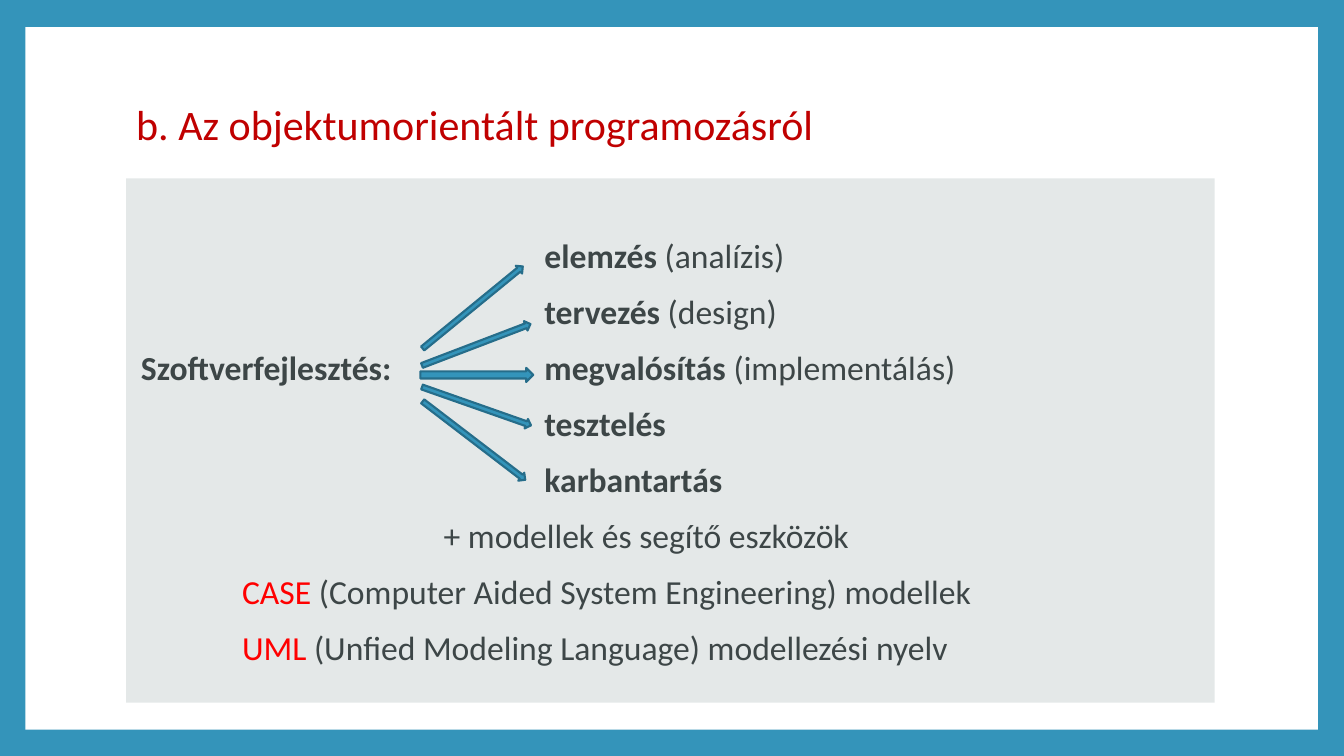
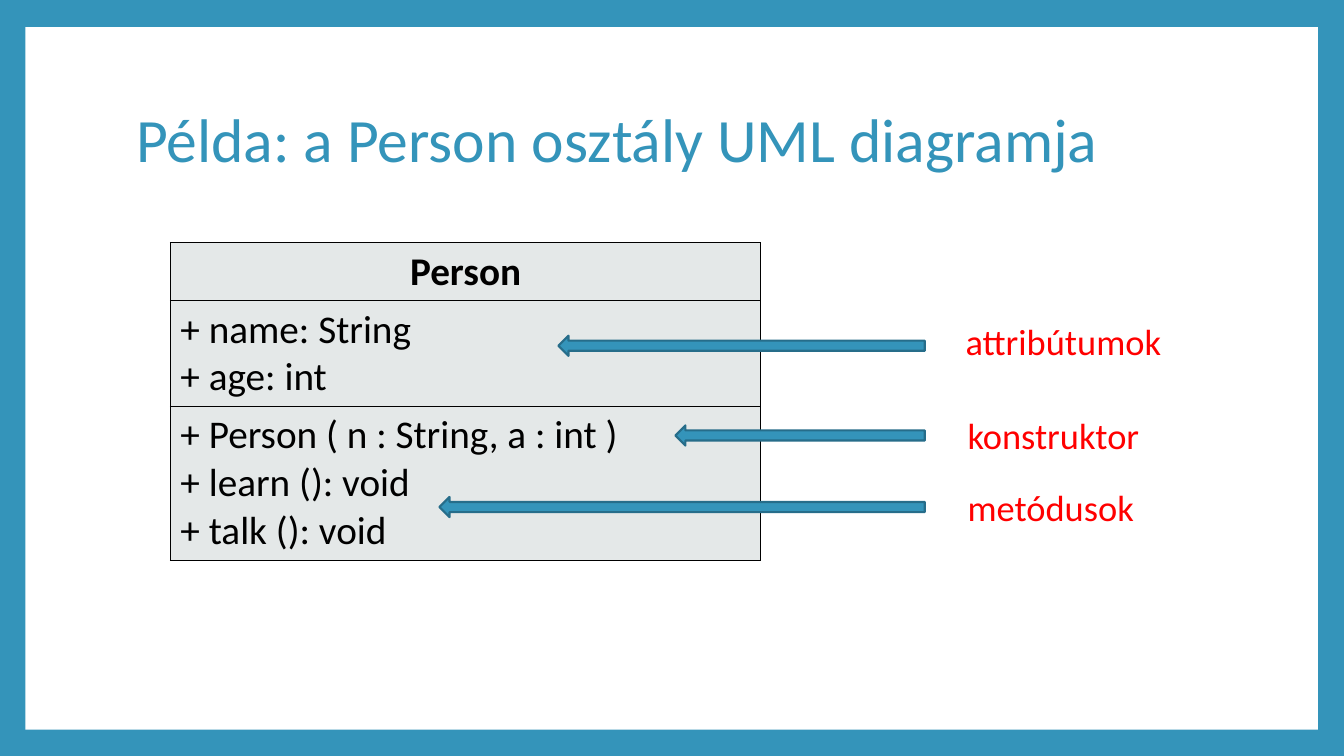
from dataclasses import dataclass
from math import atan2, degrees, hypot

from lxml.etree import SubElement
from pptx import Presentation
from pptx.dml.color import RGBColor
from pptx.enum.shapes import MSO_SHAPE
from pptx.enum.text import MSO_ANCHOR, MSO_AUTO_SIZE, PP_ALIGN
from pptx.oxml import parse_xml
from pptx.oxml.ns import nsdecls, qn
from pptx.util import Emu, Inches, Pt


@dataclass(frozen=True)
class Theme:
    font: str = "Calibri"
    blue: str = "3494BA"
    edge: str = "266D8A"
    white: str = "FFFFFF"
    gray: str = "E4E8E8"
    dark: str = "3D4647"
    black: str = "000000"
    red: str = "FF0000"
    crimson: str = "C00000"
    title_size: int = 44
    subtitle_size: int = 30
    class_size: int = 28
    label_size: int = 26
    body_size: int = 24


THEME = Theme()
WIDTH, HEIGHT = Inches(13.33), Inches(7.5)
LEFT, CONTENT_WIDTH = 9.38, 81
TITLE_TOP = 8.93
BODY_AREA = (LEFT, 23.6, CONTENT_WIDTH, 69.33)
COLUMN = Inches(1)
LABEL_WIDTH, LABEL_HEIGHT = 22, 7.2
ARROW_END = 68.81
ARROW_HEIGHT = 2.67

PLAIN = {"size": THEME.body_size, "color": THEME.dark, "bold": False}
STRONG = PLAIN | {"bold": True}
ACCENT = PLAIN | {"color": THEME.red}
LABEL = {"size": THEME.label_size, "color": THEME.red}
MEMBER = {"size": THEME.class_size, "color": THEME.black, "bold": False}
CLASS_NAME = MEMBER | {"bold": True}

DEVELOPMENT = [
    (4, [("elemzés", STRONG), (" (analízis)", PLAIN)]),
    (4, [("tervezés", STRONG), (" (design)", PLAIN)]),
    (4, [("megvalósítás", STRONG), (" (implementálás)", PLAIN)]),
    (4, [("tesztelés", STRONG)]),
    (4, [("karbantartás", STRONG)]),
    (3, [("+ modellek és segítő eszközök", PLAIN)]),
    (1, [("CASE", ACCENT), (" (Computer Aided System Engineering) modellek", PLAIN)]),
    (1, [("UML", ACCENT), (" (Unfied Modeling Language) modellezési nyelv", PLAIN)]),
]
FAN = [
    ((31.45, 46.1), (38.9, 35.25), 1.33),
    ((31.4, 48.35), (39.47, 42.87), 1.33),
    ((31.28, 49.6), (39.68, 49.6), 1.87),
    ((31.4, 51.2), (39.51, 56.27), 1.33),
    ((31.45, 53.1), (39.08, 63.47), 1.33),
]
PERSON = [
    (["Person"], CLASS_NAME, PP_ALIGN.CENTER),
    (["+ name: String", "+ age: int"], MEMBER, PP_ALIGN.LEFT),
    (["+ Person ( n : String, a : int )", "+ learn (): void", "+ talk (): void"],
     MEMBER, PP_ALIGN.LEFT),
]
CALLOUTS = [
    ("attribútumok", 71.1, 41.6, 41.55, 44.4),
    ("konstruktor", 71.25, 54, 50.25, 56.27),
    ("metódusok", 71.25, 63.55, 32.7, 65.73),
]


def across(share):
    return Emu(round(WIDTH * share / 100))


def down(share):
    return Emu(round(HEIGHT * share / 100))


def area(left, top, width, height):
    return across(left), down(top), across(width), down(height)


def apply(target, values):
    for name, value in values.items():
        setattr(target, name, value)


def paint(filled, color):
    filled.fill.solid()
    filled.fill.fore_color.rgb = RGBColor.from_string(color)


def place(box, bounds):
    apply(box, dict(zip(("left", "top", "width", "height"), bounds)))


def add_span(para, text, style):
    span = para.add_run()
    span.text = text
    apply(span.font, {"name": THEME.font, "size": Pt(style["size"]),
                      "bold": style.get("bold", False)})
    span.font.color.rgb = RGBColor.from_string(style["color"])


def add_paragraphs(frame, rows):
    for index, (spans, layout) in enumerate(rows):
        para = frame.add_paragraph() if index else frame.paragraphs[0]
        apply(para, layout)
        for text, style in spans:
            add_span(para, text, style)


def add_preset(page, kind, bounds, fill, line=None):
    shape = page.shapes.add_shape(kind, *bounds)
    shape.shadow.inherit = False
    paint(shape, fill)
    if line:
        shape.line.color.rgb = RGBColor.from_string(line)
        shape.line.width = Pt(1.5)
    else:
        shape.line.fill.background()
    return shape


def add_arrow_between(page, start, end, thickness):
    x1, y1, x2, y2 = across(start[0]), down(start[1]), across(end[0]), down(end[1])
    length, depth = round(hypot(x2 - x1, y2 - y1)), down(thickness)
    bounds = ((x1 + x2 - length) // 2, (y1 + y2 - depth) // 2, length, depth)
    arrow = add_preset(page, MSO_SHAPE.RIGHT_ARROW, bounds, THEME.blue, THEME.edge)
    arrow.rotation = degrees(atan2(y2 - y1, x2 - x1))


def add_title(page, text, size, color, height):
    title = page.shapes.title
    place(title, area(LEFT, TITLE_TOP, CONTENT_WIDTH, height))
    apply(title.text_frame, {"vertical_anchor": MSO_ANCHOR.MIDDLE, "word_wrap": True,
                             "auto_size": MSO_AUTO_SIZE.NONE})
    layout = {"alignment": PP_ALIGN.LEFT, "line_spacing": 0.9}
    add_paragraphs(title.text_frame, [([(text, {"size": size, "color": color})], layout)])


def add_body(page, lines):
    body = page.placeholders[1]
    place(body, area(*BODY_AREA))
    paint(body, THEME.gray)
    apply(body.text_frame, {"margin_left": Inches(0.15), "margin_top": Inches(0.61),
                            "vertical_anchor": MSO_ANCHOR.TOP, "word_wrap": True,
                            "auto_size": MSO_AUTO_SIZE.NONE})
    layout = {"alignment": PP_ALIGN.LEFT, "line_spacing": 0.9, "space_before": Pt(14)}
    add_paragraphs(body.text_frame, [(spans, layout) for _, spans in lines])
    for para, (column, _) in zip(body.text_frame.paragraphs, lines):
        props = para._p.get_or_add_pPr()
        props.set("marL", str(column * COLUMN))
        props.set("indent", "0")
        SubElement(props, qn("a:buNone"))


def add_label(page, text, style, left, top):
    label = page.shapes.add_textbox(*area(left, top, LABEL_WIDTH, LABEL_HEIGHT))
    label.text_frame.word_wrap = True
    add_paragraphs(label.text_frame, [([(text, style)], {"alignment": PP_ALIGN.LEFT})])


def add_borders(cell):
    props = cell._tc.get_or_add_tcPr()
    for index, side in enumerate(("lnL", "lnR", "lnT", "lnB")):
        props.insert(index, parse_xml(
            f'<a:{side} {nsdecls("a")} w="{Pt(1)}"><a:solidFill>'
            f'<a:srgbClr val="{THEME.black}"/></a:solidFill></a:{side}>'))


def add_class_table(page, sections):
    heights = [Inches(0.1 + 0.475 * len(lines)) for lines, _, _ in sections]
    bounds = (across(12.68), down(32.1), across(43.93), sum(heights))
    table = page.shapes.add_table(len(sections), 1, *bounds).table
    apply(table, {"first_row": False, "horz_banding": False})
    for index, (lines, style, alignment) in enumerate(sections):
        table.rows[index].height = heights[index]
        cell = table.cell(index, 0)
        paint(cell, THEME.gray)
        add_borders(cell)
        add_paragraphs(cell.text_frame,
                       [([(line, style)], {"alignment": alignment}) for line in lines])


def add_callout(page, text, label_left, label_top, arrow_left, arrow_top):
    add_label(page, text, LABEL, label_left, label_top)
    bounds = area(arrow_left, arrow_top, ARROW_END - arrow_left, ARROW_HEIGHT)
    add_preset(page, MSO_SHAPE.LEFT_ARROW, bounds, THEME.blue, THEME.edge)


def style_master(deck, page):
    master = deck.slide_master
    paint(master.background, THEME.blue)
    panel = add_preset(page, MSO_SHAPE.RECTANGLE, area(1.88, 3.6, 96.17, 92.93), THEME.white)
    master.element.cSld.spTree.insert(2, panel.element)


def build_development(deck):
    page = deck.slides.add_slide(deck.slide_layouts[1])
    style_master(deck, page)
    add_title(page, "b. Az objektumorientált programozásról",
              THEME.subtitle_size, THEME.crimson, 15.73)
    add_body(page, DEVELOPMENT)
    add_label(page, "Szoftverfejlesztés:", STRONG, 9.75, 45.25)
    for start, end, thickness in FAN:
        add_arrow_between(page, start, end, thickness)


def build_person(deck):
    page = deck.slides.add_slide(deck.slide_layouts[5])
    add_title(page, "Példa: a Person osztály UML diagramja",
              THEME.title_size, THEME.blue, 19.73)
    add_class_table(page, PERSON)
    for callout in CALLOUTS:
        add_callout(page, *callout)


def main():
    deck = Presentation()
    apply(deck, {"slide_width": WIDTH, "slide_height": HEIGHT})
    build_development(deck)
    build_person(deck)
    deck.save("out.pptx")


if __name__ == "__main__":
    main()
